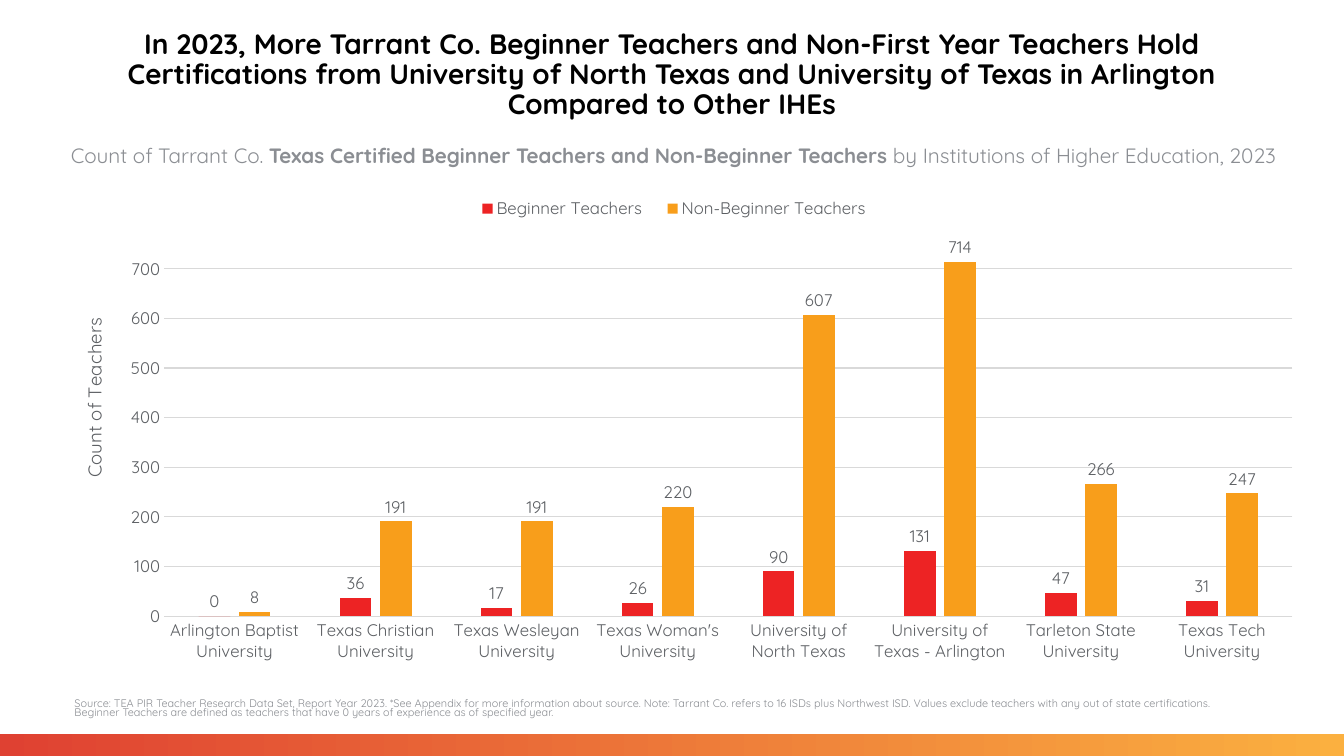
from lxml.etree import SubElement
from pptx import Presentation
from pptx.chart.data import CategoryChartData
from pptx.dml.color import RGBColor
from pptx.enum.chart import XL_CHART_TYPE, XL_LABEL_POSITION, XL_LEGEND_POSITION, XL_TICK_MARK
from pptx.enum.shapes import MSO_SHAPE
from pptx.enum.text import MSO_ANCHOR, PP_ALIGN
from pptx.oxml.ns import qn
from pptx.util import Inches, Pt

FONT = "Quicksand"
CHART_TEXT = "5C5F63"
MUTED = "8B8E93"
GRID = "D9D9D9"

CATEGORIES = [
    "Arlington Baptist University", "Texas Christian University",
    "Texas Wesleyan University", "Texas Woman's University",
    "University of North Texas", "University of Texas - Arlington",
    "Tarleton State University", "Texas Tech University",
]
SERIES = [
    ("Beginner Teachers", "ED2324", [0, 36, 17, 26, 90, 131, 47, 31]),
    ("Non-Beginner Teachers", "F89E1B", [8, 191, 191, 220, 607, 714, 266, 247]),
]
TITLE = [
    ("In 2023, More Tarrant Co. Beginner Teachers and Non-First Year Teachers Hold "
     "Certifications from University of North Texas and University of Texas in Arlington "
     "Compared to Other IHEs", True),
]
SUBTITLE = [
    ("Count of Tarrant Co. ", False),
    ("Texas Certified Beginner Teachers and Non-Beginner Teachers ", True),
    ("by Institutions of Higher Education, 2023", False),
]
SOURCE = [
    ("Source: TEA PIR Teacher Research Data Set, Report Year 2023. *See Appendix for more "
     "information about source. Note: Tarrant Co. refers to 16 ISDs plus Northwest ISD. "
     "Values exclude teachers with any out of state certifications. Beginner Teachers are "
     "defined as teachers that have 0 years of experience as of specified year.", False),
]


def color(value):
    return RGBColor.from_string(value)


def set_attributes(target, values):
    for name, value in values.items():
        setattr(target, name, value)


def style_font(font, size, text_color, bold=False):
    set_attributes(font, {"name": FONT, "size": Pt(size), "bold": bold})
    font.color.rgb = color(text_color)


def add_text(slide, box, runs, size, text_color, spacing,
             alignment=PP_ALIGN.CENTER, anchor=MSO_ANCHOR.TOP):
    frame = slide.shapes.add_textbox(*map(Inches, box)).text_frame
    set_attributes(frame, {"word_wrap": True, "vertical_anchor": anchor})
    paragraph = frame.paragraphs[0]
    set_attributes(paragraph, {"alignment": alignment, "line_spacing": spacing})
    for text, bold in runs:
        run = paragraph.add_run()
        run.text = text
        style_font(run.font, size, text_color, bold)


def add_footer_band(slide, box):
    band = slide.shapes.add_shape(MSO_SHAPE.RECTANGLE, *map(Inches, box))
    band.shadow.inherit = False
    band.line.fill.background()
    band.fill.gradient()
    band.fill.gradient_angle = 0
    for stop, stop_color in zip(band.fill.gradient_stops, ("DF4132", "FBB040")):
        stop.color.rgb = color(stop_color)


def place_chart_part(element, index, settings):
    for layout in element.findall(qn("c:layout")):
        element.remove(layout)
    layout = SubElement(element, qn("c:layout"))
    manual = SubElement(layout, qn("c:manualLayout"))
    for name, value in settings.items():
        SubElement(manual, qn(f"c:{name}")).set("val", str(value))
    element.insert(index, layout)


def style_axes(chart):
    for axis in (chart.category_axis, chart.value_axis):
        set_attributes(axis, {"major_tick_mark": XL_TICK_MARK.NONE,
                              "minor_tick_mark": XL_TICK_MARK.NONE})
        style_font(axis.tick_labels.font, 12, CHART_TEXT)
    values = chart.value_axis
    set_attributes(values, {"minimum_scale": 0, "maximum_scale": 750, "major_unit": 100,
                            "has_major_gridlines": True})
    values.format.line.fill.background()
    for line in (chart.category_axis.format.line, values.major_gridlines.format.line):
        line.color.rgb = color(GRID)
        line.width = Pt(0.75)
    paragraph = values.axis_title.text_frame.paragraphs[0]
    run = paragraph.add_run()
    run.text = "Count of Teachers"
    style_font(run.font, 13.3, CHART_TEXT)


def style_series(plot):
    set_attributes(plot, {"gap_width": 219, "overlap": -27, "vary_by_categories": False})
    for series, (_, fill_color, _) in zip(plot.series, SERIES):
        series.format.fill.solid()
        series.format.fill.fore_color.rgb = color(fill_color)
        series.invert_if_negative = False
        labels = series.data_labels
        set_attributes(labels, {"show_value": True, "position": XL_LABEL_POSITION.OUTSIDE_END})
        style_font(labels.font, 12, CHART_TEXT)


def add_teacher_chart(slide, box):
    data = CategoryChartData()
    data.categories = CATEGORIES
    for name, _, values in SERIES:
        data.add_series(name, values)
    chart = slide.shapes.add_chart(
        XL_CHART_TYPE.COLUMN_CLUSTERED, *map(Inches, box), data).chart
    set_attributes(chart, {"has_title": False, "has_legend": True})
    style_font(chart.font, 10, CHART_TEXT)
    set_attributes(chart.legend, {"position": XL_LEGEND_POSITION.BOTTOM,
                                  "include_in_layout": False})
    style_font(chart.legend.font, 12, CHART_TEXT)
    style_axes(chart)
    style_series(chart.plots[0])

    chart_element = chart.element.find(qn("c:chart"))
    plot_area = chart_element.find(qn("c:plotArea"))
    axis_title = plot_area.find(qn("c:valAx")).find(qn("c:title"))
    edges = {"xMode": "edge", "yMode": "edge"}
    place_chart_part(plot_area, 0, {"layoutTarget": "inner", **edges,
                                    "x": 0.08, "y": 0.107, "w": 0.907, "h": 0.758})
    place_chart_part(chart_element.find(qn("c:legend")), 1,
                     {**edges, "x": 0.32, "y": 0.01, "w": 0.34, "h": 0.05})
    place_chart_part(axis_title, 1, {**edges, "x": 0.01, "y": 0.25})


def build_slide(presentation):
    slide = presentation.slides.add_slide(presentation.slide_layouts[6])
    add_footer_band(slide, (0, 7.28, 13.33, 0.22))
    add_text(slide, (0.38, 1.4, 12.6, 0.5), SUBTITLE, 14.8, MUTED, 0.9)
    add_text(slide, (0.64, 0.3, 12.05, 0.9), TITLE, 20, "000000", 0.9,
             anchor=MSO_ANCHOR.MIDDLE)
    add_teacher_chart(slide, (0.64, 1.9, 12.34, 4.87))
    add_text(slide, (0.64, 6.9, 11.75, 0.42), SOURCE, 7.8, MUTED, 0.7,
             alignment=PP_ALIGN.LEFT)


def main():
    presentation = Presentation()
    set_attributes(presentation, {"slide_width": Inches(13.33), "slide_height": Inches(7.5)})
    build_slide(presentation)
    presentation.save("out.pptx")


if __name__ == "__main__":
    main()
